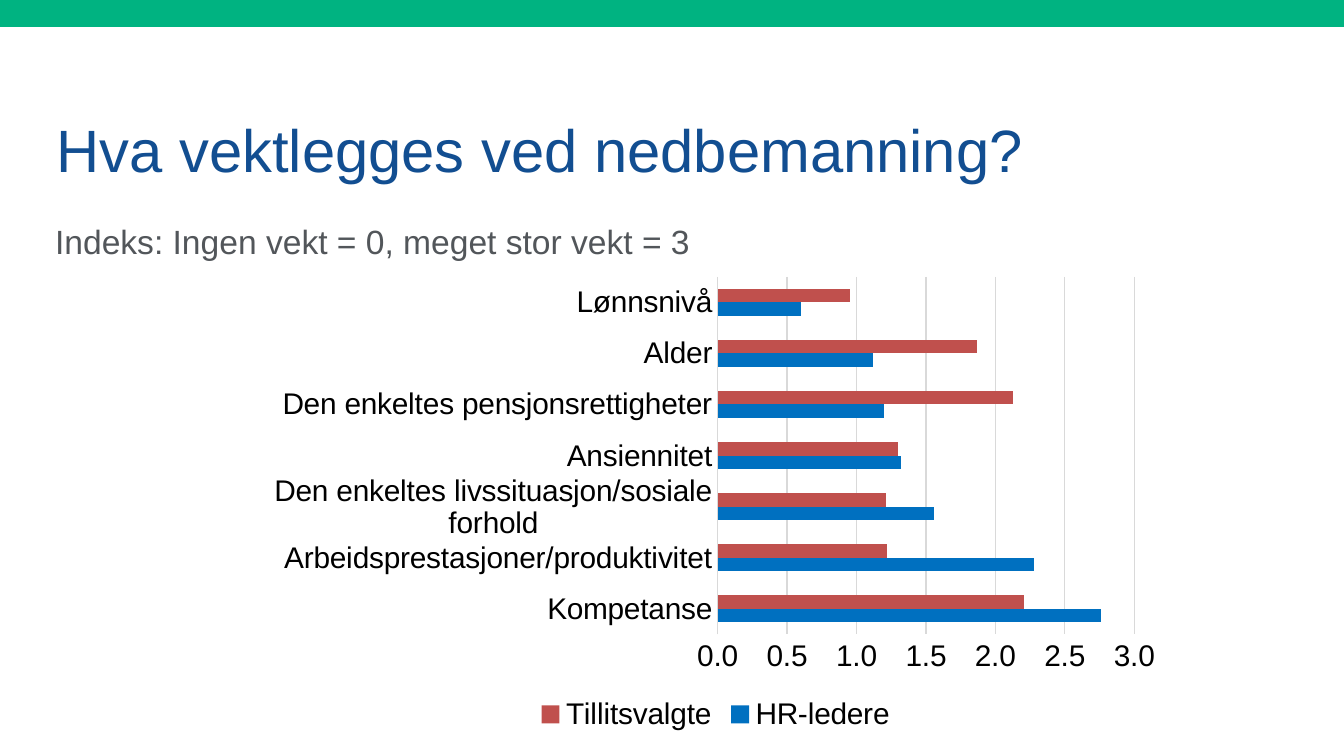
from dataclasses import dataclass

from lxml import etree
from pptx import Presentation
from pptx.chart.data import CategoryChartData
from pptx.dml.color import RGBColor
from pptx.enum.chart import XL_CHART_TYPE, XL_LEGEND_POSITION, XL_TICK_MARK
from pptx.enum.shapes import MSO_SHAPE
from pptx.enum.text import MSO_ANCHOR, MSO_AUTO_SIZE, PP_ALIGN
from pptx.oxml.ns import qn
from pptx.util import Inches, Pt

BAR_CLUSTERED = XL_CHART_TYPE.BAR_CLUSTERED
LEGEND_BOTTOM = XL_LEGEND_POSITION.BOTTOM
NO_TICK = XL_TICK_MARK.NONE
RECTANGLE = MSO_SHAPE.RECTANGLE
TOP, BOTTOM = MSO_ANCHOR.TOP, MSO_ANCHOR.BOTTOM
NO_FIT = MSO_AUTO_SIZE.NONE
LEFT = PP_ALIGN.LEFT
AUTO_ROTATION = "-60000000"


@dataclass(frozen=True)
class Theme:
    font: str = "Arial"
    band: str = "00B381"
    title: str = "124E91"
    body: str = "52565A"
    chart: str = "000000"
    grid: str = "D9D9D9"
    title_size: int = 32
    body_size: int = 18
    chart_size: int = 16
    grid_width: float = 0.75


CATEGORIES = [
    "Kompetanse",
    "Arbeidsprestasjoner/produktivitet",
    "Den enkeltes livssituasjon/sosiale forhold",
    "Ansiennitet",
    "Den enkeltes pensjonsrettigheter",
    "Alder",
    "Lønnsnivå",
]
SERIES = [
    ("HR-ledere", "0070C0", (2.76, 2.28, 1.56, 1.32, 1.2, 1.12, 0.6)),
    ("Tillitsvalgte", "C0504D", (2.21, 1.22, 1.21, 1.3, 2.13, 1.87, 0.95)),
]


class SlideBuilder:
    def __init__(self, slide, theme):
        self.s = slide
        self.theme = theme

    def style(self, font, size, color):
        font.name = self.theme.font
        font.size = Pt(size)
        font.color.rgb = RGBColor.from_string(color)

    def grid_line(self, line):
        line.color.rgb = RGBColor.from_string(self.theme.grid)
        line.width = Pt(self.theme.grid_width)

    def band(self, x, y, w, h):
        sp = self.s.shapes.add_shape(RECTANGLE, Inches(x), Inches(y), Inches(w), Inches(h))
        sp.shadow.inherit = False
        sp.fill.solid()
        sp.fill.fore_color.rgb = RGBColor.from_string(self.theme.band)
        sp.line.fill.background()

    def placeholder(self, sp, box, text, size, color, anchor):
        sp.left, sp.top, sp.width, sp.height = map(Inches, box)
        tf = sp.text_frame
        tf.text = text
        tf.word_wrap = True
        tf.auto_size = NO_FIT
        tf.vertical_anchor = anchor
        p = tf.paragraphs[0]
        p.alignment = LEFT
        self.style(p.font, size, color)
        return p

    def title(self, box, text):
        self.placeholder(self.s.shapes.title, box, text,
                         self.theme.title_size, self.theme.title, BOTTOM)

    def body(self, box, text):
        p = self.placeholder(self.s.placeholders[1], box, text,
                             self.theme.body_size, self.theme.body, TOP)
        p.space_before = Pt(12)
        pPr = p._p.get_or_add_pPr()
        pPr.set("marL", "0")
        pPr.set("indent", "0")
        pPr.find(qn("a:spcBef")).addnext(etree.Element(qn("a:buNone")))

    def plot_layout(self, chart, box, plot_box):
        left, top, width, height = box
        x, y, w, h = plot_box
        area = chart._chartSpace.chart.plotArea
        for old in area.findall(qn("c:layout")):
            area.remove(old)
        layout = etree.Element(qn("c:layout"))
        manual = etree.SubElement(layout, qn("c:manualLayout"))
        for tag, value in (("layoutTarget", "inner"), ("xMode", "edge"), ("yMode", "edge"),
                           ("x", (x - left) / width), ("y", (y - top) / height),
                           ("w", w / width), ("h", h / height)):
            etree.SubElement(manual, qn(f"c:{tag}")).set("val", str(value))
        area.insert(0, layout)

    def bar_chart(self, box, plot_box, categories, series):
        data = CategoryChartData(number_format="0.0")
        data.categories = categories
        for name, _, values in series:
            data.add_series(name, values)
        chart = self.s.shapes.add_chart(BAR_CLUSTERED, *map(Inches, box), data).chart
        self.style(chart.font, self.theme.chart_size, self.theme.chart)
        chart.has_title = False
        chart.has_legend = True
        chart.legend.position = LEGEND_BOTTOM
        chart.legend.include_in_layout = False
        self.style(chart.legend.font, self.theme.chart_size, self.theme.chart)

        plot = chart.plots[0]
        plot.gap_width = 182
        plot.overlap = 0
        plot.vary_by_categories = False
        for bars, (_, color, _) in zip(plot.series, series):
            bars.format.fill.solid()
            bars.format.fill.fore_color.rgb = RGBColor.from_string(color)

        for axis in (chart.category_axis, chart.value_axis):
            axis.major_tick_mark = axis.minor_tick_mark = NO_TICK
            self.style(axis.tick_labels.font, self.theme.chart_size, self.theme.chart)
            body = axis._element.find(qn("c:txPr")).find(qn("a:bodyPr"))
            body.set("rot", AUTO_ROTATION)
            body.set("vert", "horz")
        self.grid_line(chart.category_axis.format.line)
        axis = chart.value_axis
        axis.minimum_scale, axis.maximum_scale, axis.major_unit = 0, 3, 0.5
        axis.tick_labels.number_format = "0.0"
        axis.tick_labels.number_format_is_linked = False
        axis.format.line.fill.background()
        axis.has_major_gridlines = True
        self.grid_line(axis.major_gridlines.format.line)
        self.plot_layout(chart, box, plot_box)


def main():
    prs = Presentation()
    prs.slide_width = Inches(10)
    prs.slide_height = prs.slide_width * 9 // 16
    slide = SlideBuilder(prs.slides.add_slide(prs.slide_layouts[1]), Theme())
    slide.band(0, 0, 10, 0.2)
    slide.title((0.32, 0.35, 9.24, 1.07), "Hva vektlegges ved nedbemanning?")
    slide.bar_chart((1.91, 1.99, 6.83, 3.49), (5.34, 2.06, 3.1, 2.66), CATEGORIES, SERIES)
    slide.body((0.31, 1.59, 9.24, 0.4), "Indeks: Ingen vekt = 0, meget stor vekt = 3")
    prs.save("out.pptx")


if __name__ == "__main__":
    main()
